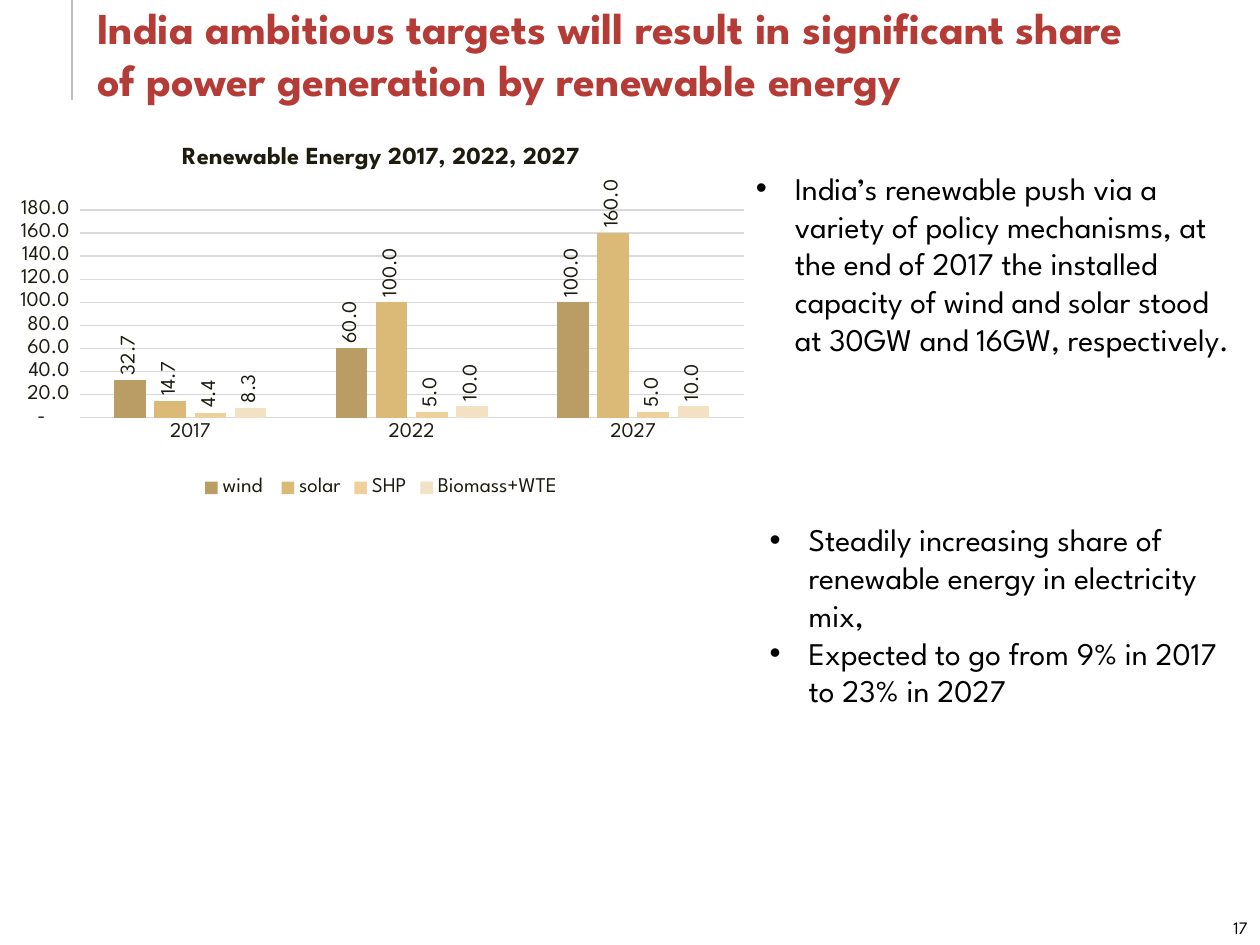
from dataclasses import dataclass

from lxml.etree import SubElement as Sub
from pptx import Presentation
from pptx.chart.data import CategoryChartData as Data
from pptx.dml.color import RGBColor as RGB
from pptx.enum.chart import XL_CHART_TYPE as Kind, XL_LABEL_POSITION as Spot
from pptx.enum.chart import XL_LEGEND_POSITION as Side, XL_TICK_MARK as Tick
from pptx.enum.shapes import MSO_CONNECTOR as Conn
from pptx.enum.text import MSO_ANCHOR as Anchor, MSO_AUTO_SIZE as Fit, PP_ALIGN as Align
from pptx.oxml import parse_xml
from pptx.oxml.ns import nsdecls, qn
from pptx.util import Inches, Pt


@dataclass(frozen=True)
class Theme:
    face: str = "League Spartan"
    red: str = "B53C36"
    black: str = "000000"
    dark: str = "1E1C11"
    rule: str = "BFBFBF"
    grid: str = "D9D9D9"
    bars: tuple = ("B99D65", "DBBA78", "EDD09B", "F3E1C3")
    head: float = 25.2
    body: float = 18
    cap: float = 14
    label: float = 12
    note: float = 10


T = Theme()
YEARS = ["2017", "2022", "2027"]
POWER = {
    "wind ": (32.7, 60, 100),
    "solar": (14.7, 100, 160),
    "SHP": (4.4, 5, 5),
    "Biomass+WTE": (8.3, 10, 10),
}
MONEY = '_(* #,##0.0_);_(* \\(#,##0.0\\);_(* "-"??_);_(@_)'


def put(item, **vals):
    for key, val in vals.items():
        setattr(item, key, val)


def style(font, size, color, bold=False):
    put(font, name=T.face, size=Pt(size), bold=bold)
    font.color.rgb = RGB.from_string(color)


def stroke(line, color, width):
    line.color.rgb = RGB.from_string(color)
    line.width = Pt(width)


def bullet(para):
    props = para._p.get_or_add_pPr()
    props.set("marL", str(Inches(0.31)))
    props.set("indent", str(-Inches(0.31)))
    Sub(props, qn("a:buFont")).set("typeface", "Arial")
    Sub(props, qn("a:buChar")).set("char", "•")


def add_text(slide, box, lines, size, align=Align.LEFT, dots=False):
    frame = slide.shapes.add_textbox(*map(Inches, box)).text_frame
    put(frame, word_wrap=True, auto_size=Fit.SHAPE_TO_FIT_TEXT)
    for i, line in enumerate(lines):
        para = frame.add_paragraph() if i else frame.paragraphs[0]
        put(para, text=line, alignment=align)
        if dots:
            bullet(para)
        style(para.runs[0].font, size, T.black)


def add_title(slide, text):
    title = slide.shapes.title
    put(title, left=Inches(0.67), top=Inches(-0.04),
        width=Inches(8.67), height=Inches(0.93))
    frame = title.text_frame
    put(frame, text=text, word_wrap=True, auto_size=Fit.NONE,
        vertical_anchor=Anchor.BOTTOM)
    para = frame.paragraphs[0]
    para.alignment = Align.LEFT
    style(para.runs[0].font, T.head, T.red, True)


def add_rule(slide):
    x = Inches(0.57)
    rule = slide.shapes.add_connector(Conn.STRAIGHT, x, 0, x, Inches(0.79))
    stroke(rule.line, T.rule, 1.25)
    Sub(rule._element.spPr, qn("a:effectLst"))


def place_plot(chart, **vals):
    plot = chart._chartSpace.chart.plotArea
    for old in plot.findall(qn("c:layout")):
        plot.remove(old)
    parts = {"layoutTarget": "inner", "xMode": "edge", "yMode": "edge", **vals}
    tags = "".join(f'<c:{key} val="{val}"/>' for key, val in parts.items())
    plot.insert(0, parse_xml(
        f'<c:layout {nsdecls("c")}><c:manualLayout>{tags}</c:manualLayout></c:layout>'))


def format_axes(chart):
    for axis in (chart.category_axis, chart.value_axis):
        put(axis, major_tick_mark=Tick.NONE, minor_tick_mark=Tick.NONE)
        style(axis.tick_labels.font, T.label, T.dark)
    stroke(chart.category_axis.format.line, T.grid, 0.75)
    axis = chart.value_axis
    put(axis, minimum_scale=0, maximum_scale=180, major_unit=20,
        has_major_gridlines=True)
    put(axis.tick_labels, number_format=MONEY, number_format_is_linked=False)
    stroke(axis.major_gridlines.format.line, T.grid, 0.75)
    axis.format.line.fill.background()


def format_bars(plot):
    put(plot, gap_width=219, overlap=-27, vary_by_categories=False)
    for row, color in zip(plot.series, T.bars):
        row.format.fill.solid()
        row.format.fill.fore_color.rgb = RGB.from_string(color)
        tags = row.data_labels
        put(tags, show_value=True, position=Spot.OUTSIDE_END,
            number_format="0.0", number_format_is_linked=False)
        style(tags.font, T.label, T.dark)
        body = tags._element.find(qn("c:txPr")).find(qn("a:bodyPr"))
        body.set("rot", "-5400000")
        body.set("vert", "horz")


def add_bars(slide, box, name):
    data = Data()
    data.categories = YEARS
    for key, vals in POWER.items():
        data.add_series(key, vals)
    chart = slide.shapes.add_chart(
        Kind.COLUMN_CLUSTERED, *map(Inches, box), data).chart
    style(chart.font, T.note, T.dark)
    frame = chart.chart_title.text_frame
    frame.text = name
    style(frame.paragraphs[0].runs[0].font, T.cap, T.dark, True)
    chart.has_legend = True
    put(chart.legend, position=Side.BOTTOM, include_in_layout=False)
    style(chart.legend.font, T.label, T.dark)
    format_axes(chart)
    format_bars(chart.plots[0])
    place_plot(chart, x=0.085, y=0.223, w=0.914, h=0.552)


def main():
    deck = Presentation()
    put(deck, slide_width=Inches(10), slide_height=Inches(7.5))
    slide = deck.slides.add_slide(deck.slide_layouts[5])
    add_text(slide, (8.3, 7.23, 1.7, 0.27), ["17"], T.note, Align.RIGHT)
    add_rule(slide)
    add_title(slide, "India ambitious targets will result in significant share "
                     "of power generation by renewable energy")
    add_bars(slide, (0.12, 1, 5.79, 2.99), "Renewable Energy 2017, 2022, 2027")
    add_text(slide, (5.9, 1.29, 4, 2.22), [
        "India’s renewable push via a variety of policy mechanisms, at the end "
        "of 2017 the installed capacity of wind and solar stood at 30GW and "
        "16GW, respectively."], T.body, dots=True)
    add_text(slide, (6.01, 4.08, 3.76, 1.62), [
        "Steadily increasing share of renewable energy in electricity mix,",
        "Expected to go from 9% in 2017 to 23% in 2027"], T.body, dots=True)
    deck.save("out.pptx")


if __name__ == "__main__":
    main()
